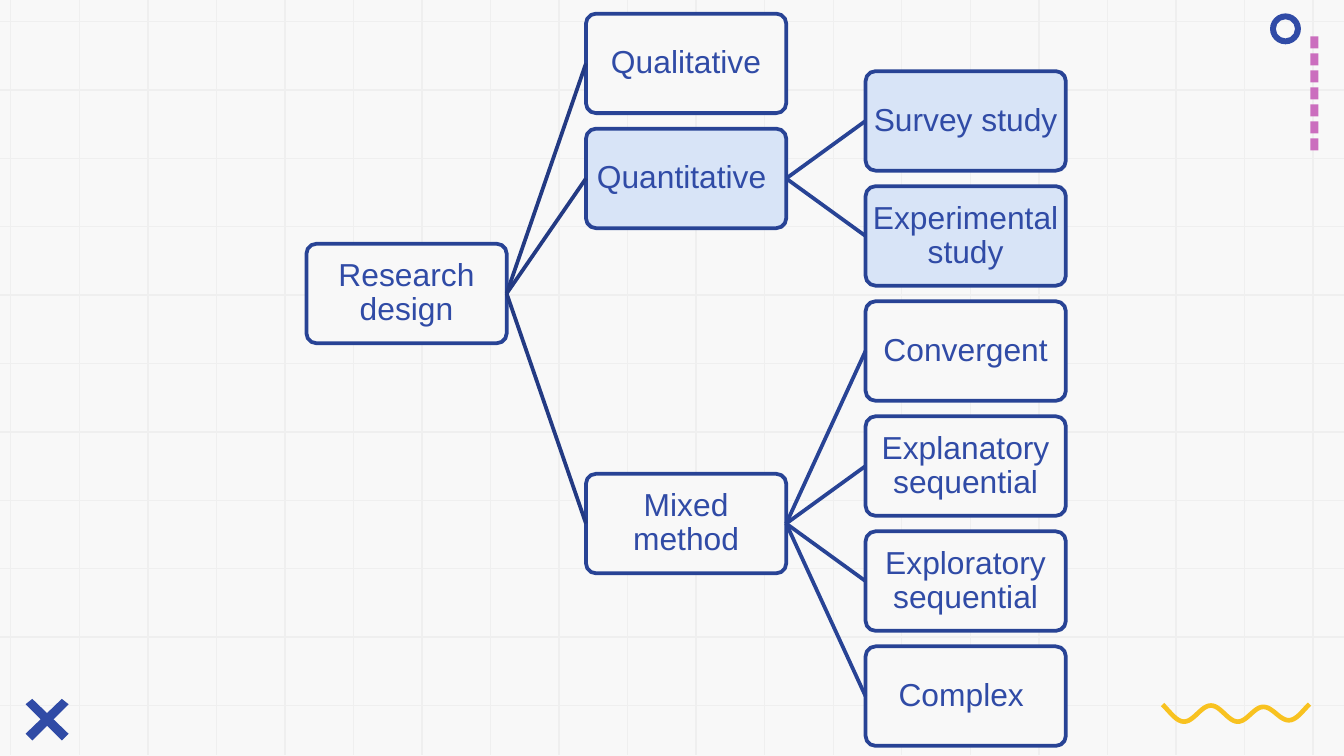
"""Build a slide with a tree of research designs on a squared-paper background."""
from math import cos, pi

from lxml import etree
from pptx import Presentation
from pptx.dml.color import RGBColor
from pptx.enum.shapes import MSO_CONNECTOR, MSO_SHAPE
from pptx.enum.text import MSO_ANCHOR, PP_ALIGN
from pptx.oxml.ns import qn
from pptx.util import Inches, Pt

STRAIGHT = MSO_CONNECTOR.STRAIGHT
ROUNDED, RECT, DONUT = MSO_SHAPE.ROUNDED_RECTANGLE, MSO_SHAPE.RECTANGLE, MSO_SHAPE.DONUT
MIDDLE, CENTER = MSO_ANCHOR.MIDDLE, PP_ALIGN.CENTER
LEFT_SITE, RIGHT_SITE = 1, 3

COLORS = {
    "paper": "F8F8F8", "grid": "EFEFEF", "pink": "CB6EBE", "blue": "304BA6",
    "yellow": "F8C220", "border": "284395", "branch": "233A83", "light": "D8E4F7",
}
FRAME = {
    "word_wrap": True, "vertical_anchor": MIDDLE,
    "margin_left": Inches(0.03), "margin_right": Inches(0.03),
    "margin_top": Inches(0.03), "margin_bottom": Inches(0.03),
}
PARAGRAPH = {"alignment": CENTER, "line_spacing": 0.9}
FONT = {"name": "Arial", "size": Pt(17)}

WIDTH, HEIGHT = 10, 5.62
BOX_W, BOX_H = 1.49, 0.74
COL_X, COL_STEP = 2.28, 2.08
ROW_Y, ROW_STEP = 0.53, (4.81 - 0.53) / 5

# Each node: text, row, fill, children
TREE = ("Research design", 1.5, "paper", [
    ("Qualitative", -0.5, "paper", []),
    ("Quantitative ", 0.5, "light", [
        ("Survey study", 0, "light", []),
        ("Experimental study", 1, "light", []),
    ]),
    ("Mixed method", 3.5, "paper", [
        ("Convergent", 2, "paper", []),
        ("Explanatory sequential", 3, "paper", []),
        ("Exploratory sequential", 4, "paper", []),
        ("Complex ", 5, "paper", []),
    ]),
])
WAVE_TURNS = [(8.57, 5.2), (8.81, 5.37), (9.01, 5.25), (9.21, 5.37),
              (9.4, 5.26), (9.59, 5.36), (9.82, 5.2)]


def rgb(name):
    return RGBColor.from_string(COLORS[name])


def apply(obj, values):
    for name, value in values.items():
        setattr(obj, name, value)


class Drawer:
    def __init__(self, slide):
        self.s = slide

    def paint(self, sp, fill=None, line=None, width=2):
        sp.shadow.inherit = False
        if fill:
            sp.fill.solid()
            sp.fill.fore_color.rgb = rgb(fill)
        else:
            sp.fill.background()
        if line:
            sp.line.color.rgb = rgb(line)
            sp.line.width = Pt(width)
        else:
            sp.line.fill.background()
        return sp

    def shape(self, kind, x, y, w, h, fill, line=None, adj=None):
        sp = self.s.shapes.add_shape(kind, Inches(x), Inches(y), Inches(w), Inches(h))
        if adj is not None:
            sp.adjustments[0] = adj
        return self.paint(sp, fill, line)

    def box(self, text, x, y, fill):
        sp = self.shape(ROUNDED, x, y, BOX_W, BOX_H, fill, "border", 0.1)
        tf = sp.text_frame
        apply(tf, FRAME)
        p = tf.paragraphs[0]
        apply(p, PARAGRAPH)
        r = p.add_run()
        r.text = text
        apply(r.font, FONT)
        r.font.color.rgb = rgb("blue")
        return sp

    def line(self, x1, y1, x2, y2, color, width):
        c = self.s.shapes.add_connector(
            STRAIGHT, Inches(x1), Inches(y1), Inches(x2), Inches(y2))
        c.line.color.rgb = rgb(color)
        c.line.width = Pt(width)
        etree.SubElement(c._element.spPr, qn("a:effectLst"))
        return c

    def link(self, parent, child, color):
        c = self.line(0, 0, 1, 1, color, 2)
        c.begin_connect(parent, RIGHT_SITE)
        c.end_connect(child, LEFT_SITE)

    def outline(self, points, closed, **style):
        pts = [(Inches(x), Inches(y)) for x, y in points]
        fb = self.s.shapes.build_freeform(*pts[0])
        fb.add_line_segments(pts[1:], close=closed)
        return self.paint(fb.convert_to_shape(), **style)

    def node(self, node, level=0):
        text, row, fill, children = node
        sp = self.box(text, COL_X + level * COL_STEP, ROW_Y + row * ROW_STEP, fill)
        for child in children:
            self.link(sp, self.node(child, level + 1), "border" if level else "branch")
        return sp


def wave_points(turns, start, end, steps=12):
    points = []
    for (x1, y1), (x2, y2) in zip(turns, turns[1:]):
        for i in range(steps):
            t = i / steps
            x = x1 + (x2 - x1) * t
            if start <= x <= end:
                points.append((x, y1 + (y2 - y1) * (1 - cos(pi * t)) / 2))
    return points


def main():
    prs = Presentation()
    prs.slide_width, prs.slide_height = Inches(WIDTH), Inches(WIDTH) * 9 // 16
    s = prs.slides.add_slide(prs.slide_layouts[6])
    s.background.fill.solid()
    s.background.fill.fore_color.rgb = rgb("paper")
    d = Drawer(s)

    for i in range(11):
        y = 0.16 + i * (5.25 - 0.16) / 10
        d.line(0, y, WIDTH, y, "grid", 0.75)
    for i in range(20):
        x = 0.08 + i * (9.77 - 0.08) / 19
        d.line(x, 0, x, HEIGHT, "grid", 0.75)

    for i in range(7):
        d.shape(RECT, 9.75, 0.27 + i * (1.03 - 0.27) / 6, 0.06, 0.09, "pink")
    bar = [(0.24, 5.2), (0.19, 5.24), (0.46, 5.51), (0.51, 5.46)]
    for points in (bar, [(0.7 - x, y) for x, y in bar]):
        d.outline(points, True, fill="blue")
    d.outline(wave_points(WAVE_TURNS, 8.64, 9.75), False, line="yellow", width=2.5)
    d.shape(DONUT, 9.45, 0.1, 0.23, 0.23, "blue", adj=0.19)

    d.node(TREE)
    prs.save("out.pptx")


if __name__ == "__main__":
    main()
